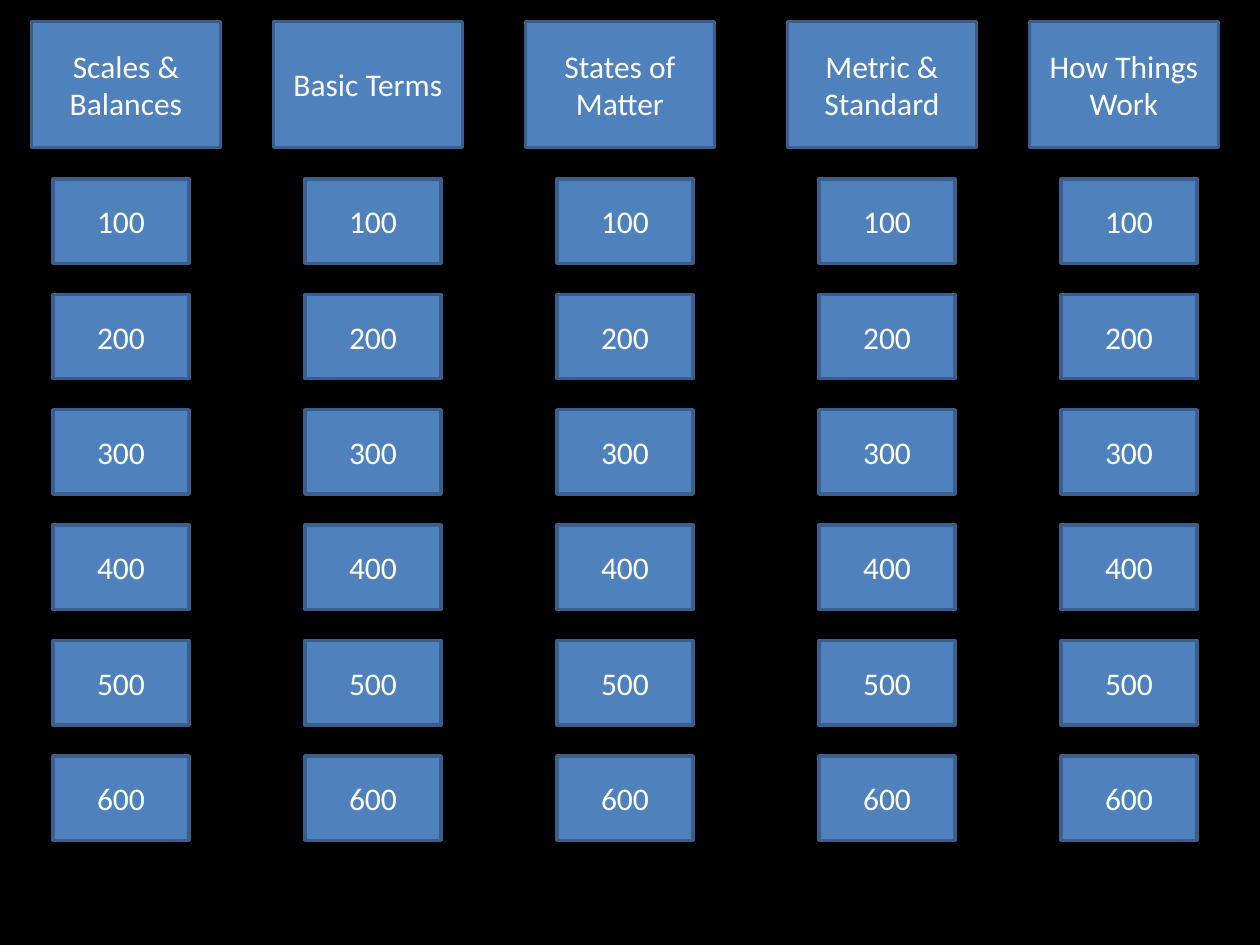
"""Build a quiz board with five categories and six point values each."""
import pptx
import pptx.util
import pptx.dml.color
import pptx.enum.shapes
import pptx.enum.text

Inches = pptx.util.Inches
Pt = pptx.util.Pt
RGBColor = pptx.dml.color.RGBColor

BLACK = RGBColor(0x00, 0x00, 0x00)
WHITE = RGBColor(0xFF, 0xFF, 0xFF)
BLUE = RGBColor(0x4F, 0x81, 0xBD)
DARK_BLUE = RGBColor(0x3A, 0x5F, 0x8C)

CATEGORIES = [
    ("Scales & Balances", 0.25, 0.42),
    ("Basic Terms", 2.17, 2.42),
    ("States of Matter", 4.17, 4.42),
    ("Metric & Standard", 6.25, 6.5),
    ("How Things Work", 8.17, 8.42),
]
POINTS = range(100, 700, 100)
HEADER_TOP = 0.17
FIRST_TOP, LAST_TOP = 1.42, 6
ROW_STEP = (LAST_TOP - FIRST_TOP) / (len(POINTS) - 1)


def add_box(s, text, left, top, width, height):
    sp = s.shapes.add_shape(
        pptx.enum.shapes.MSO_SHAPE.RECTANGLE,
        Inches(left), Inches(top), Inches(width), Inches(height),
    )
    sp.shadow.inherit = False
    sp.fill.solid()
    sp.fill.fore_color.rgb = BLUE
    sp.line.color.rgb = DARK_BLUE
    sp.line.width = Pt(2)
    tf = sp.text_frame
    tf.text = text
    tf.word_wrap = True
    tf.vertical_anchor = pptx.enum.text.MSO_ANCHOR.MIDDLE
    p = tf.paragraphs[0]
    p.alignment = pptx.enum.text.PP_ALIGN.CENTER
    font = p.runs[0].font
    font.name = "Calibri"
    font.size = Pt(18)
    font.color.rgb = WHITE


def add_category(s, name, header_left, tile_left):
    add_box(s, name, header_left, HEADER_TOP, 1.5, 1)
    for row, points in enumerate(POINTS):
        add_box(s, str(points), tile_left, FIRST_TOP + row * ROW_STEP, 1.08, 0.67)


def main():
    prs = pptx.Presentation()
    prs.slide_width = Inches(10)
    prs.slide_height = Inches(7.5)
    s = prs.slides.add_slide(prs.slide_layouts[6])
    s.background.fill.solid()
    s.background.fill.fore_color.rgb = BLACK
    for name, header_left, tile_left in CATEGORIES:
        add_category(s, name, header_left, tile_left)
    prs.save("out.pptx")


if __name__ == "__main__":
    main()
